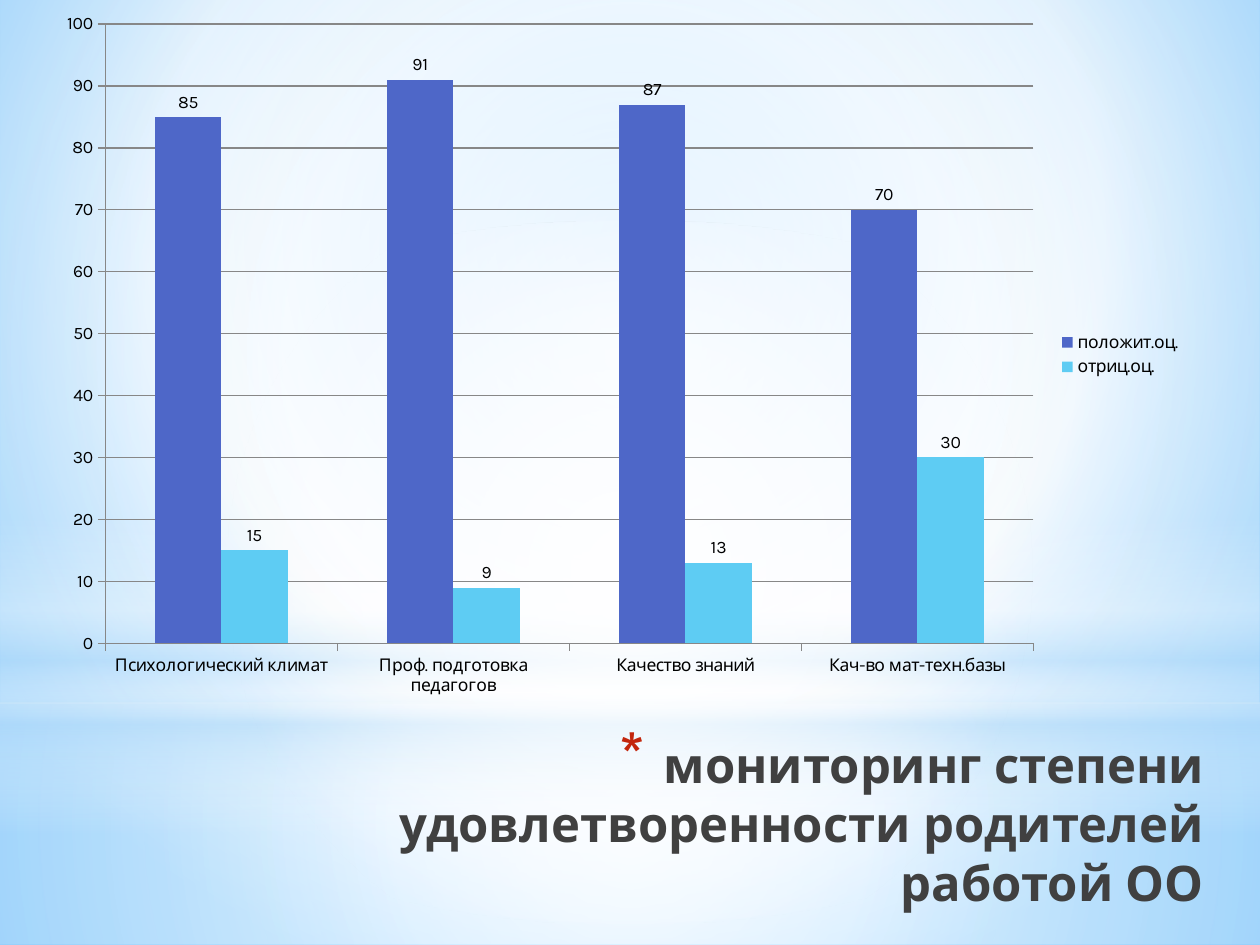
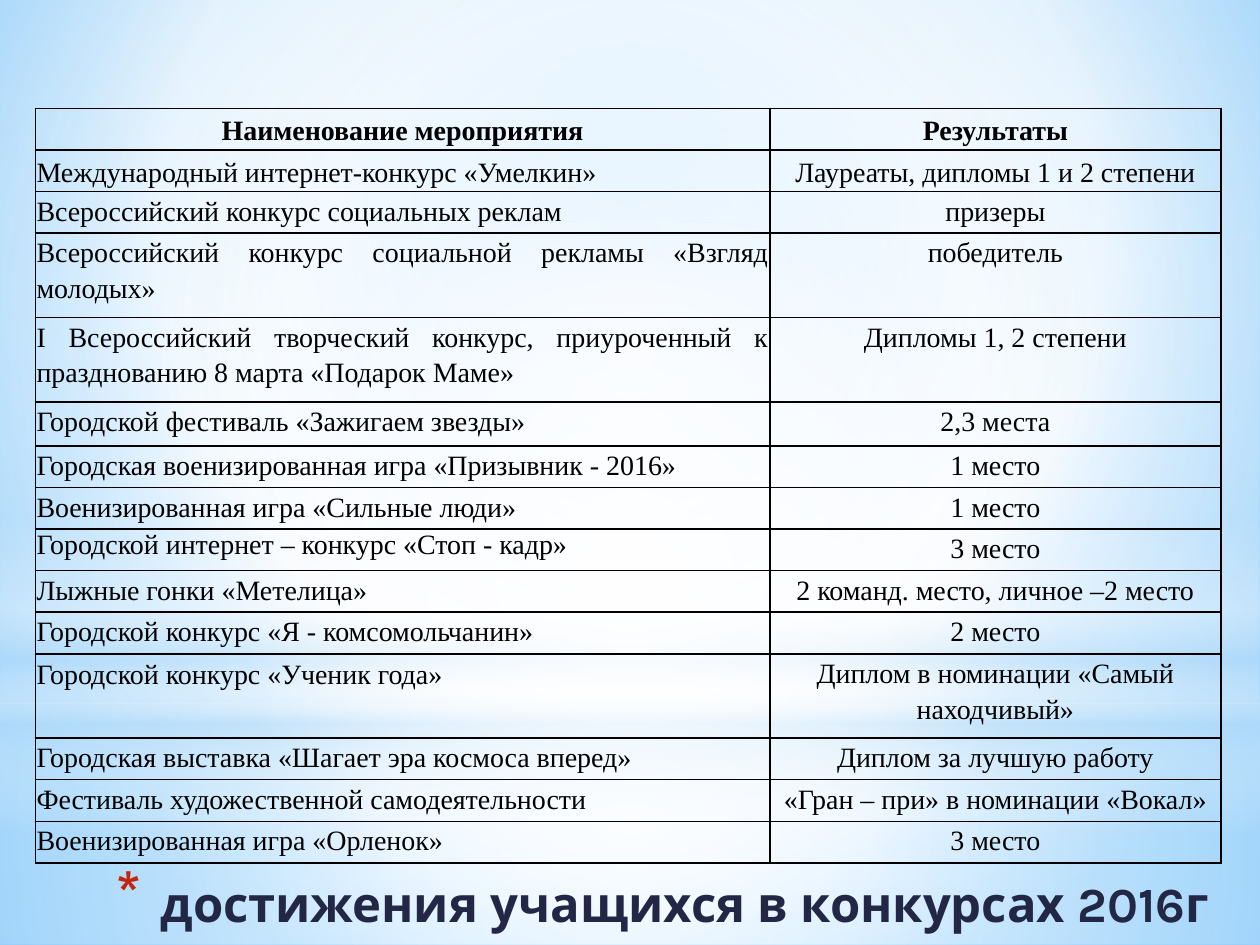
from lxml.etree import SubElement
from pptx import Presentation
from pptx.chart.data import CategoryChartData
from pptx.dml.color import RGBColor
from pptx.enum.chart import XL_CHART_TYPE, XL_LABEL_POSITION, XL_LEGEND_POSITION, XL_TICK_MARK
from pptx.enum.shapes import MSO_SHAPE
from pptx.enum.text import MSO_ANCHOR, PP_ALIGN
from pptx.oxml.ns import qn
from pptx.util import Inches, Pt

HEX = {
    "black": "000000", "dark": "404040", "navy": "212745", "red": "C3260C",
    "white": "FFFFFF", "sky": "9ED5FF", "azure": "5BB9FF", "pale": "B4DCFA",
    "blue": "4E67C8", "cyan": "5ECCF3", "grey": "878787",
}
HEAD_FONT, BODY_FONT = "Karla", "Times New Roman"

BACK = [(0, "sky", 100), (60, "white", 100), (100, "azure", 100)]
BACK_FOCUS = (20, 10, 20, 60)
CENTRE = (50, 50, 50, 50)
BANDS = [
    (MSO_SHAPE.RECTANGLE, 5.58, 1.92, CENTRE,
     [(0, "white", 91), (37, "white", 76), (100, "pale", 79)]),
    (MSO_SHAPE.RECTANGLE, 0, 5.58, CENTRE,
     [(0, "white", 89), (48, "white", 62), (100, "pale", 79)]),
    (MSO_SHAPE.RECTANGLE, 4.12, 2.5, None,
     [(0, "white", 0), (29, "white", 30), (45, "pale", 40),
      (55, "white", 26), (65, "pale", 60), (100, "white", 0)]),
    (MSO_SHAPE.OVAL, 1.75, 5.58, CENTRE,
     [(0, "white", 100), (56, "white", 0)]),
]

SURVEY_TITLE = "мониторинг степени удовлетворенности родителей работой ОО"
TOPICS = ["Психологический климат", "Проф. подготовка педагогов",
          "Качество знаний", "Кач-во мат-техн.базы"]
VOTES = [("положит.оц.", "blue", (85, 91, 87, 70)),
         ("отриц.оц.", "cyan", (15, 9, 13, 30))]

AWARD_TITLE = "достижения учащихся в конкурсах 2016г"
AWARDS = [
    ("Наименование мероприятия", "Результаты", 0.33),
    ("Международный интернет-конкурс «Умелкин»", "Лауреаты, дипломы 1 и 2 степени", 0.33),
    ("Всероссийский конкурс социальных реклам", "призеры", 0.33),
    ("Всероссийский конкурс социальной рекламы «Взгляд молодых»", "победитель", 0.67),
    ("I Всероссийский творческий конкурс, приуроченный к празднованию 8 марта «Подарок Маме»",
     "Дипломы 1, 2 степени", 0.67),
    ("Городской фестиваль «Зажигаем звезды»", "2,3 места", 0.35),
    ("Городская военизированная игра «Призывник - 2016»", "1 место", 0.33),
    ("Военизированная игра «Сильные люди»", "1 место", 0.33),
    ("Городской интернет – конкурс «Стоп - кадр»", "3 место", 0.33),
    ("Лыжные гонки «Метелица»", "2 команд. место, личное –2 место", 0.33),
    ("Городской конкурс «Я - комсомольчанин»", "2 место", 0.33),
    ("Городской конкурс «Ученик года»", "Диплом в номинации «Самый находчивый»", 0.67),
    ("Городская выставка «Шагает эра космоса вперед»", "Диплом за лучшую работу", 0.33),
    ("Фестиваль художественной самодеятельности", "«Гран – при» в номинации «Вокал»", 0.33),
    ("Военизированная игра «Орленок»", "3 место", 0.33),
]
WIDTHS = (5.83, 3.58)
SPACING = {(8, 0): 1.0, (11, 0): 1.2}


def color(name):
    return RGBColor.from_string(HEX[name])


def box(*sizes):
    return [Inches(size) for size in sizes]


def style(font, name, size, tint, bold=False):
    font.name, font.size, font.bold = name, Pt(size), bold
    font.color.rgb = color(tint)


def add(parent, tag, **attrs):
    return SubElement(parent, qn(tag), {key: str(val) for key, val in attrs.items()})


def blend(fill, owner, stops, focus):
    fill.gradient()
    grad = owner.find(".//" + qn("a:gradFill"))
    for child in list(grad):
        grad.remove(child)
    group = add(grad, "a:gsLst")
    for place, name, alpha in stops:
        stop = add(group, "a:gs", pos=place * 1000)
        add(add(stop, "a:srgbClr", val=HEX[name]), "a:alpha", val=alpha * 1000)
    if focus:
        sides = {side: val * 1000 for side, val in zip("ltrb", focus)}
        add(add(grad, "a:path", path="circle"), "a:fillToRect", **sides)
    else:
        add(grad, "a:lin", ang=90 * 60000, scaled=0)


def add_page(deck):
    page = deck.slides.add_slide(deck.slide_layouts[6])
    blend(page.background.fill, page.element, BACK, BACK_FOCUS)
    for kind, top, height, focus, stops in BANDS:
        band = page.shapes.add_shape(kind, *box(0, top, 10, height))
        band.shadow.inherit = False
        band.line.fill.background()
        blend(band.fill, band.element, stops, focus)
    return page


def add_title(page, text, place, tint):
    frame = page.shapes.add_textbox(*box(*place)).text_frame
    frame.word_wrap = True
    frame.text = text
    para = frame.paragraphs[0]
    para.alignment = PP_ALIGN.RIGHT
    style(para.runs[0].font, HEAD_FONT, 28, tint, True)
    props = para._p.get_or_add_pPr()
    props.set("marL", str(Inches(0.35)))
    props.set("indent", str(-Inches(0.35)))
    add(add(props, "a:buClr"), "a:srgbClr", val=HEX["red"])
    add(props, "a:buSzPct", val=128000)
    add(props, "a:buChar", char="*")


def add_survey(page):
    data = CategoryChartData()
    data.categories = TOPICS
    for name, _, marks in VOTES:
        data.add_series(name, marks)
    chart = page.shapes.add_chart(
        XL_CHART_TYPE.COLUMN_CLUSTERED, *box(0.35, 0, 9.13, 5.63), data).chart
    style(chart.font, HEAD_FONT, 10, "black")
    chart.has_title = False
    chart.has_legend = True
    chart.legend.position = XL_LEGEND_POSITION.RIGHT
    chart.legend.include_in_layout = False
    scale = chart.value_axis
    scale.minimum_scale, scale.maximum_scale, scale.major_unit = 0, 100, 10
    scale.has_major_gridlines = True
    for axis in (chart.category_axis, scale):
        axis.major_tick_mark = XL_TICK_MARK.OUTSIDE
    for line in (chart.category_axis.format.line, scale.format.line,
                 scale.major_gridlines.format.line):
        line.color.rgb = color("grey")
        line.width = Pt(0.75)
    plot = chart.plots[0]
    plot.gap_width, plot.overlap, plot.vary_by_categories = 150, 0, False
    for bars, (_, tint, _) in zip(plot.series, VOTES):
        bars.format.fill.solid()
        bars.format.fill.fore_color.rgb = color(tint)
        bars.invert_if_negative = False
        bars.data_labels.show_value = True
        bars.data_labels.position = XL_LABEL_POSITION.OUTSIDE_END


def add_borders(cell):
    props = cell._tc.get_or_add_tcPr()
    for spot, side in enumerate(("a:lnL", "a:lnR", "a:lnT", "a:lnB")):
        line = add(props, side, w=Pt(1))
        add(add(line, "a:solidFill"), "a:srgbClr", val=HEX["black"])
        props.insert(spot, line)


def add_awards(page):
    heights = [row[2] for row in AWARDS]
    grid = page.shapes.add_table(
        len(AWARDS), len(WIDTHS), *box(0.28, 0.86, sum(WIDTHS), sum(heights))).table
    grid.first_row = grid.horz_banding = False
    for column, width in zip(grid.columns, WIDTHS):
        column.width = Inches(width)
    for r, (event, prize, height) in enumerate(AWARDS):
        grid.rows[r].height = Inches(height)
        for c, text in enumerate((event, prize)):
            cell = grid.cell(r, c)
            cell.text_frame.text = text
            cell.margin_left = cell.margin_right = Inches(0.01)
            cell.margin_top = cell.margin_bottom = 0
            cell.vertical_anchor = MSO_ANCHOR.MIDDLE if r < 2 else MSO_ANCHOR.TOP
            cell.fill.background()
            add_borders(cell)
            para = cell.text_frame.paragraphs[0]
            para.alignment = PP_ALIGN.CENTER if c or r == 0 else PP_ALIGN.JUSTIFY
            para.line_spacing = SPACING.get((r, c), 1.15)
            style(para.runs[0].font, BODY_FONT, 16, "black", r == 0)


def main():
    deck = Presentation()
    deck.slide_width, deck.slide_height = box(10, 7.5)
    page = add_page(deck)
    add_title(page, SURVEY_TITLE, (1.96, 5.78, 7.69, 1.35), "dark")
    add_survey(page)
    page = add_page(deck)
    add_title(page, AWARD_TITLE, (0.31, 6.88, 9.38, 0.62), "navy")
    add_awards(page)
    deck.save("out.pptx")


if __name__ == "__main__":
    main()
